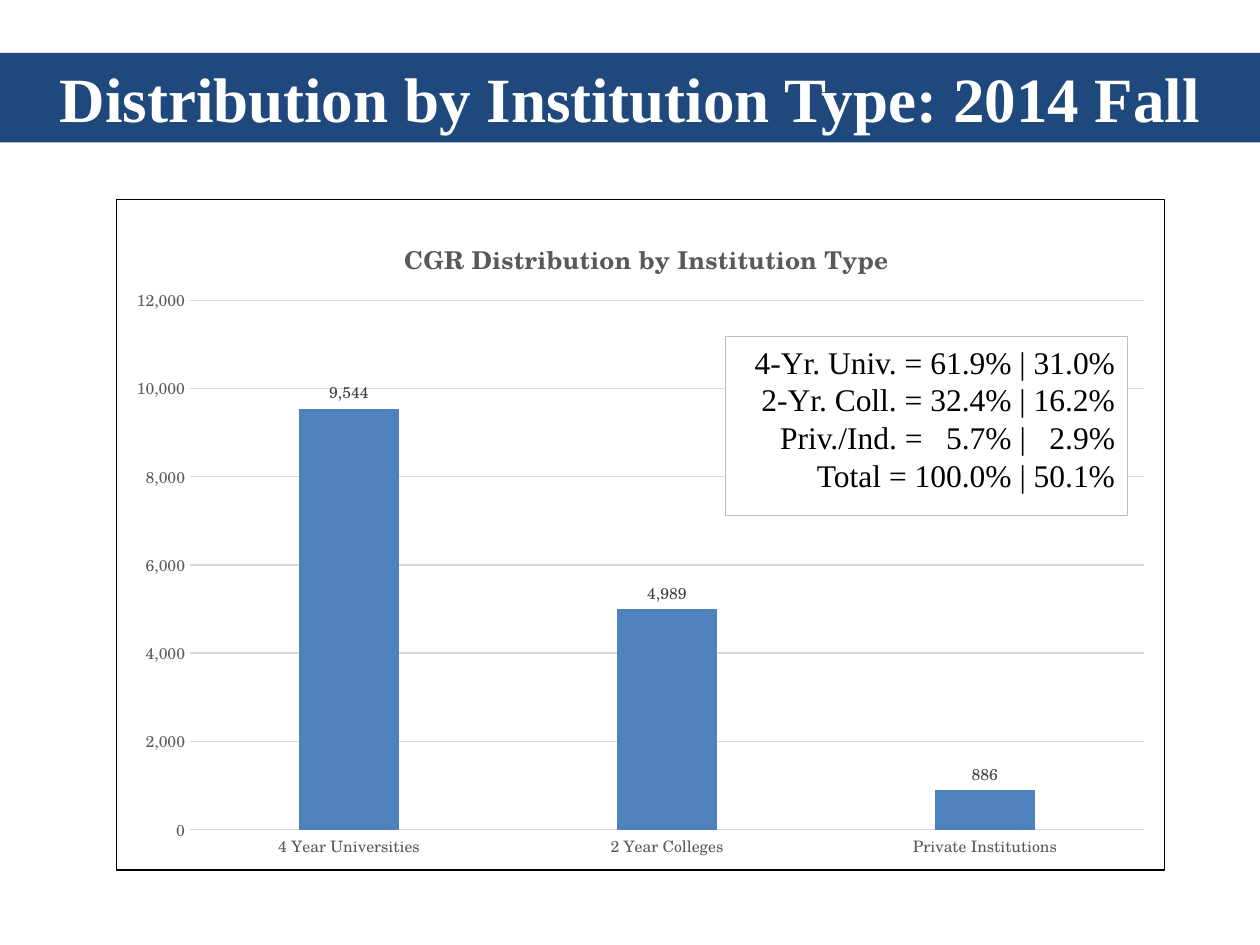
from lxml.etree import SubElement, fromstring
from pptx import Presentation
from pptx.chart.data import CategoryChartData
from pptx.dml.color import RGBColor
from pptx.enum.chart import XL_CHART_TYPE as ChartType, XL_LABEL_POSITION as LabelPosition
from pptx.enum.chart import XL_TICK_MARK as TickMark
from pptx.enum.shapes import MSO_SHAPE as Shape
from pptx.enum.text import MSO_ANCHOR as Anchor, PP_ALIGN as Align
from pptx.oxml.ns import nsdecls, qn
from pptx.util import Inches, Pt

SERIF = "Times New Roman"
CHART_FACE = "TeX Gyre Schola"
GRID_GRAY = "D9D9D9"
AXIS_GRAY = "595959"
NUMBER = "#,##0"


def color(code):
    return RGBColor.from_string(code)


def format_font(font, face, size, ink, bold=False):
    font.name, font.size, font.bold = face, Pt(size), bold
    font.color.rgb = color(ink)


def format_line(line, ink):
    line.color.rgb = color(ink)
    line.width = Pt(0.75)


def write(frame, text, align, **style):
    for index, words in enumerate(text.split("\n")):
        paragraph = frame.paragraphs[0] if index == 0 else frame.add_paragraph()
        paragraph.alignment = align
        run = paragraph.add_run()
        run.text = words
        format_font(run.font, **style)


def add_panel(slide, box, fill, border=None):
    panel = slide.shapes.add_shape(Shape.RECTANGLE, *map(Inches, box))
    panel.shadow.inherit = False
    panel.fill.solid()
    panel.fill.fore_color.rgb = color(fill)
    if border:
        format_line(panel.line, border)
    else:
        panel.line.fill.background()
    panel.text_frame.word_wrap = True
    return panel


def set_layout(part, position, **shares):
    for previous in part.findall(qn("c:layout")):
        part.remove(previous)
    layout = fromstring(f"<c:layout {nsdecls('c')}><c:manualLayout/></c:layout>")
    manual = layout[0]
    if "w" in shares:
        SubElement(manual, qn("c:layoutTarget")).set("val", "inner")
    for mode in ("xMode", "yMode"):
        SubElement(manual, qn(f"c:{mode}")).set("val", "edge")
    for name, share in shares.items():
        SubElement(manual, qn(f"c:{name}")).set("val", str(share))
    part.insert(position, layout)


def add_banner(slide, box):
    banner = add_panel(slide, box, "1F497D")
    banner.text_frame.vertical_anchor = Anchor.MIDDLE
    write(banner.text_frame, "Distribution by Institution Type: 2014 Fall", Align.CENTER,
          face=SERIF, size=36, ink="FFFFFF", bold=True)


def format_axes(chart):
    categories, values = chart.category_axis, chart.value_axis
    for axis in (categories, values):
        axis.major_tick_mark = axis.minor_tick_mark = TickMark.NONE
        format_font(axis.tick_labels.font, CHART_FACE, 9, AXIS_GRAY)
    format_line(categories.format.line, GRID_GRAY)
    values.format.line.fill.background()
    values.minimum_scale, values.maximum_scale, values.major_unit = 0, 12000, 2000
    format_line(values.major_gridlines.format.line, GRID_GRAY)
    values.tick_labels.number_format = NUMBER
    values.tick_labels.number_format_is_linked = False


def format_bars(plot):
    plot.gap_width, plot.overlap, plot.vary_by_categories = 219, -27, False
    bars = plot.series[0]
    bars.format.fill.solid()
    bars.format.fill.fore_color.rgb = color("4F81BD")
    labels = bars.data_labels
    labels.show_value = True
    labels.position = LabelPosition.OUTSIDE_END
    labels.number_format, labels.number_format_is_linked = NUMBER, False
    format_font(labels.font, CHART_FACE, 9, "404040")


def add_distribution_chart(slide, box):
    data = CategoryChartData(number_format=NUMBER)
    data.categories = ["4 Year Universities", "2 Year Colleges", "Private Institutions"]
    data.add_series("Series 1", (9544, 4989, 886))
    chart = slide.shapes.add_chart(
        ChartType.COLUMN_CLUSTERED, *map(Inches, box), data).chart
    chart.has_legend = False
    format_font(chart.font, CHART_FACE, 10, "000000")
    write(chart.chart_title.text_frame, "CGR Distribution by Institution Type", Align.CENTER,
          face=CHART_FACE, size=14, ink=AXIS_GRAY, bold=True)
    format_axes(chart)
    format_bars(chart.plots[0])

    body = chart.element.find(qn("c:chart"))
    set_layout(body.find(qn("c:title")), 1, x=0.27, y=0.05)
    set_layout(body.find(qn("c:plotArea")), 0, x=0.07, y=0.15, w=0.91, h=0.79)
    body.addnext(fromstring(
        f'<c:spPr {nsdecls("c", "a")}><a:solidFill><a:srgbClr val="FFFFFF"/></a:solidFill>'
        f'<a:ln w="{Pt(0.75)}"><a:solidFill><a:srgbClr val="000000"/></a:solidFill></a:ln>'
        "</c:spPr>"))


def add_shares_box(slide, box):
    shares = add_panel(slide, box, "FFFFFF", border="BDBDBD")
    shares.text_frame.vertical_anchor = Anchor.TOP
    write(shares.text_frame,
          "4-Yr. Univ. = 61.9% | 31.0%\n"
          "2-Yr. Coll. = 32.4% | 16.2%\n"
          "Priv./Ind. =   5.7% |   2.9%\n"
          "Total = 100.0% | 50.1%",
          Align.RIGHT, face=SERIF, size=18, ink="000000")


def main():
    deck = Presentation()
    deck.slide_width, deck.slide_height = Inches(10), Inches(7.5)
    slide = deck.slides.add_slide(deck.slide_layouts[6])
    add_banner(slide, (0, 0.42, 10, 0.71))
    add_distribution_chart(slide, (0.92, 1.58, 8.33, 5.33))
    add_shares_box(slide, (5.76, 2.67, 3.19, 1.42))
    deck.save("out.pptx")


if __name__ == "__main__":
    main()
